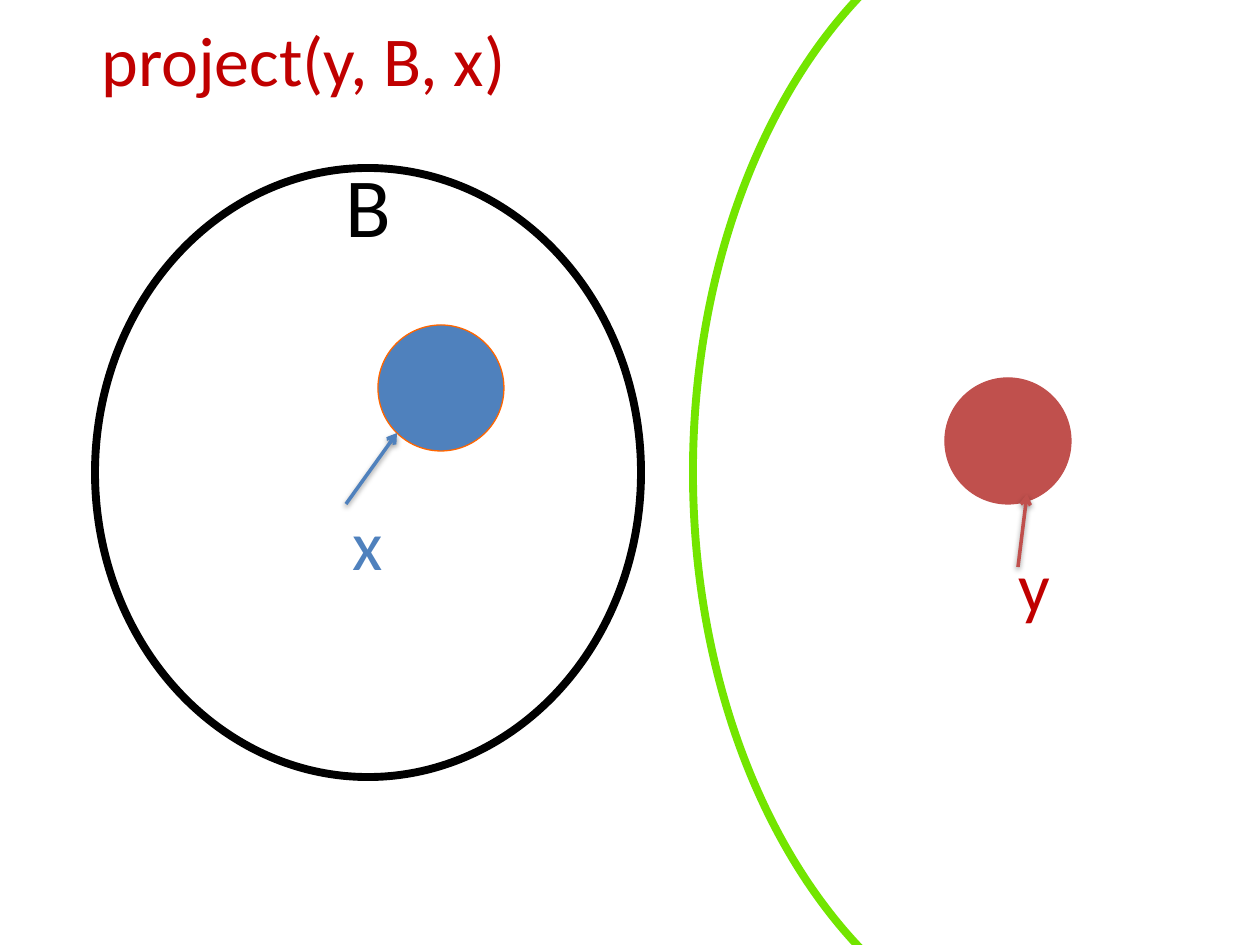
from lxml import etree
from pptx import Presentation
from pptx.dml.color import RGBColor
from pptx.enum.shapes import MSO_CONNECTOR, MSO_SHAPE
from pptx.enum.text import MSO_ANCHOR, MSO_AUTO_SIZE, PP_ALIGN
from pptx.oxml.ns import qn
from pptx.util import Emu, Pt

OVAL = MSO_SHAPE.OVAL
LINE = MSO_CONNECTOR.STRAIGHT
CENTER = PP_ALIGN.CENTER
TOP = MSO_ANCHOR.TOP
FIT = MSO_AUTO_SIZE.SHAPE_TO_FIT_TEXT

BLACK, GREEN, ORANGE = "000000", "73E500", "FF6600"
BLUE, ROSE, RED = "4F81BD", "C0504D", "C00000"
BALL = 126


def px(n):
    return Emu(round(n * 914400 / 126))


def hue(code):
    return RGBColor.from_string(code)


def ring(slide, box, edge, width, fill=None):
    """Draw an ellipse, hollow unless a fill is given."""
    oval = slide.shapes.add_shape(OVAL, *map(px, box))
    oval.shadow.inherit = False
    if fill:
        oval.fill.solid()
        oval.fill.fore_color.rgb = hue(fill)
    else:
        oval.fill.background()
    oval.line.color.rgb = hue(edge)
    oval.line.width = Pt(width)


def label(slide, box, text, size, color):
    frame = slide.shapes.add_textbox(*map(px, box)).text_frame
    frame.word_wrap = False
    frame.auto_size = FIT
    frame.vertical_anchor = TOP
    para = frame.paragraphs[0]
    para.alignment = CENTER
    run = para.add_run()
    run.text = text
    run.font.name = "Calibri"
    run.font.size = Pt(size)
    run.font.color.rgb = hue(color)


def arrow(slide, start, end, color):
    """Draw a line with an open head at its end and a soft shadow below."""
    link = slide.shapes.add_connector(LINE, *map(px, start + end))
    link.line.color.rgb = hue(color)
    link.line.width = Pt(2)
    etree.SubElement(link.line._get_or_add_ln(), qn("a:tailEnd"), type="arrow")
    props = link._element.spPr
    effects = etree.SubElement(props, qn("a:effectLst"))
    shade = etree.SubElement(
        effects, qn("a:outerShdw"), blurRad=str(Pt(3.1)), dist=str(Pt(1.6)),
        dir="5400000", rotWithShape="0")
    tint = etree.SubElement(shade, qn("a:srgbClr"), val=BLACK)
    etree.SubElement(tint, qn("a:alpha"), val="38000")


def point(slide, spot, name, fill, edge, ink, text, start, end):
    """Draw a named ball; text box and arrow ends are offsets from its corner."""
    left, top = spot
    ring(slide, (left, top, BALL, BALL), edge, 0.75, fill)
    label(slide, (left + text[0], top + text[1], 57, 97), name, 40, ink)
    arrow(slide, (left + start[0], top + start[1]),
          (left + end[0], top + end[1]), fill)


def ball_b(slide, box):
    left, top, width, _ = box
    ring(slide, box, BLACK, 4.5)
    point(slide, (left + 283, top + 157), "x", BLUE, ORANGE, BLUE,
          (-39, 169), (-32, 179), (19, 108))
    label(slide, (left + width // 2 - 36, top - 21, 72, 115), "B", 48, BLACK)


def ball_y(slide, box):
    left, top = box[:2]
    point(slide, (left + 252, top + 494), "y", ROSE, ROSE, RED,
          (61, 158), (73, 189), (82, 116))
    ring(slide, box, GREEN, 4.5)


def main():
    deck = Presentation()
    deck.slide_width, deck.slide_height = px(1260), px(945)
    slide = deck.slides.add_slide(deck.slide_layouts[6])
    label(slide, (86, 10, 435, 97), "project(y, B, x)", 40, RED)
    ball_b(slide, (95, 168, 546, 609))
    ball_y(slide, (693, -116, 809, 1176))
    deck.save("out.pptx")


if __name__ == "__main__":
    main()
